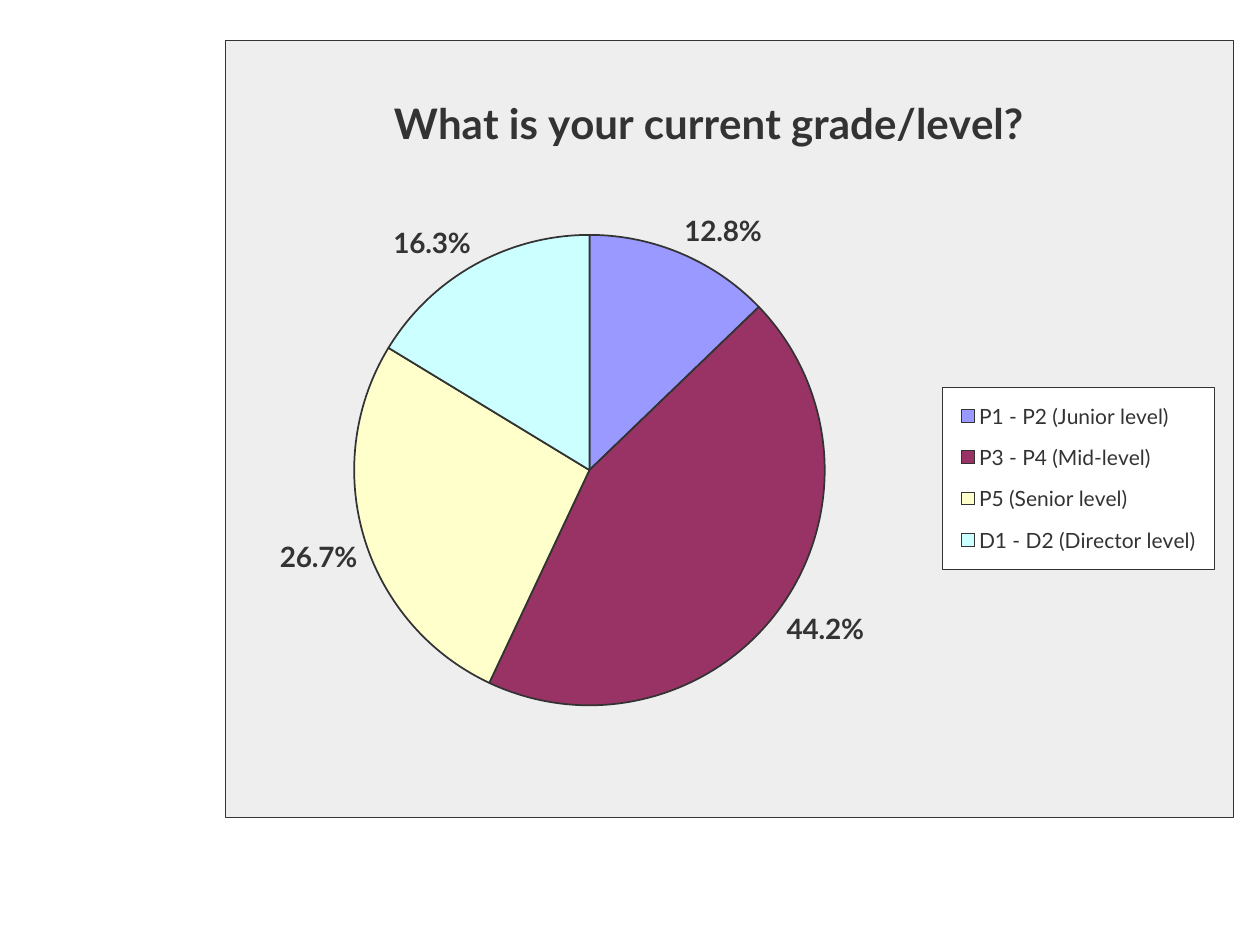
from dataclasses import dataclass
from typing import NamedTuple, Optional

from pptx import Presentation
from pptx import util as u
from pptx.chart.data import CategoryChartData
from pptx.dml.color import RGBColor
from pptx.enum import chart as ch
from pptx.oxml import parse_xml
from pptx.oxml.ns import nsdecls, qn

PX = u.Inches(1) // 126


@dataclass(frozen=True)
class Theme:
    face: str = "Lato"
    ink: str = "333333"
    panel: str = "EEEEEE"
    paper: str = "FFFFFF"
    head: int = 24
    label: int = 16
    key: int = 12
    base: int = 10
    thin: float = 0.25


class Box(NamedTuple):
    left: int
    top: int
    width: int
    height: int


class Slice(NamedTuple):
    name: str
    share: float
    fill: str


THEME = Theme()
FRAME = Box(225, 40, 1008, 778)
PLOT = Box(354, 190, 471, 560)
HEAD = Box(386, 84, 628, 50)
KEY = Box(943, 387, 272, 182)
SLICES = [
    Slice("P1 - P2 (Junior level)", 0.128, "9999FF"),
    Slice("P3 - P4 (Mid-level)", 0.442, "993366"),
    Slice("P5 (Senior level)", 0.267, "FFFFCC"),
    Slice("D1 - D2 (Director level)", 0.163, "CCFFFF"),
]


def style(font, size: int, bold: bool = False) -> None:
    form = {"name": THEME.face, "size": u.Pt(size), "bold": bold}
    for key, value in form.items():
        setattr(font, key, value)
    font.color.rgb = RGBColor.from_string(THEME.ink)


def panel(fill: str, edge: Optional[float]):
    """Shape properties for a chart part; no edge means no outline."""
    paint = '<a:solidFill><a:srgbClr val="{}"/></a:solidFill>'
    line = paint.format(THEME.ink) if edge else "<a:noFill/>"
    width = u.Pt(edge or 0)
    return parse_xml(
        f'<c:spPr {nsdecls("c", "a")}>{paint.format(fill)}'
        f'<a:ln w="{width}">{line}</a:ln></c:spPr>'
    )


def layout(box: Box, inner: bool = False, sized: bool = True):
    """Manual layout as fractions of the chart frame."""
    rows = [
        ("xMode", "edge"),
        ("yMode", "edge"),
        ("x", round((box.left - FRAME.left) / FRAME.width, 3)),
        ("y", round((box.top - FRAME.top) / FRAME.height, 3)),
    ]
    if inner:
        rows.insert(0, ("layoutTarget", "inner"))
    if sized:
        rows += [
            ("w", round(box.width / FRAME.width, 3)),
            ("h", round(box.height / FRAME.height, 3)),
        ]
    body = "".join(f'<c:{tag} val="{value}"/>' for tag, value in rows)
    return parse_xml(
        f'<c:layout {nsdecls("c")}><c:manualLayout>{body}'
        "</c:manualLayout></c:layout>"
    )


def place(part, node, after: Optional[str] = None) -> None:
    """Set the layout of a part, first or after the named child."""
    for old in part.findall(qn("c:layout")):
        part.remove(old)
    if after:
        part.find(qn(after)).addnext(node)
    else:
        part.insert(0, node)


def add_pie(slide):
    data = CategoryChartData(number_format="0.0%")
    data.categories = [s.name for s in SLICES]
    data.add_series("Series 1", [s.share for s in SLICES])
    spot = [u.Emu(n * PX) for n in FRAME]
    return slide.shapes.add_chart(ch.XL_CHART_TYPE.PIE, *spot, data).chart


def paint_slices(chart) -> None:
    plot = chart.plots[0]
    plot.vary_by_categories = True
    for i, item in enumerate(SLICES):
        form = plot.series[0].points[i].format
        form.fill.solid()
        form.fill.fore_color.rgb = RGBColor.from_string(item.fill)
        form.line.color.rgb = RGBColor.from_string(THEME.ink)
        form.line.width = u.Pt(1)
    plot.has_data_labels = True
    labels = plot.data_labels
    form = {
        "show_value": True,
        "show_percentage": False,
        "number_format": "0.0%",
        "number_format_is_linked": False,
        "position": ch.XL_LABEL_POSITION.OUTSIDE_END,
    }
    for key, value in form.items():
        setattr(labels, key, value)
    style(labels.font, THEME.label, True)


def set_title(chart) -> None:
    chart.has_title = True
    frame = chart.chart_title.text_frame
    frame.text = "What is your current grade/level?"
    style(frame.paragraphs[0].runs[0].font, THEME.head, True)
    root = chart.element.find(qn("c:chart")).find(qn("c:title"))
    place(root, layout(HEAD, sized=False), "c:tx")


def set_legend(chart) -> None:
    chart.has_legend = True
    chart.legend.position = ch.XL_LEGEND_POSITION.RIGHT
    chart.legend.include_in_layout = False
    style(chart.legend.font, THEME.key)
    root = chart.element.find(qn("c:chart")).find(qn("c:legend"))
    place(root, layout(KEY), "c:legendPos")
    root.find(qn("c:overlay")).addnext(panel(THEME.paper, THEME.thin))


def set_panels(chart) -> None:
    root = chart.element.find(qn("c:chart"))
    area = root.find(qn("c:plotArea"))
    place(area, layout(PLOT, inner=True))
    area.append(panel(THEME.panel, None))
    root.addnext(panel(THEME.panel, THEME.thin))
    root.addprevious(parse_xml(f'<c:roundedCorners {nsdecls("c")} val="0"/>'))


def main() -> None:
    deck = Presentation()
    deck.slide_width, deck.slide_height = u.Inches(10), u.Inches(7.5)
    slide = deck.slides.add_slide(deck.slide_layouts[6])

    # Pie with its slices and labels
    chart = add_pie(slide)
    style(chart.font, THEME.base)
    paint_slices(chart)

    # Title, legend and backgrounds
    set_title(chart)
    set_legend(chart)
    set_panels(chart)
    deck.save("out.pptx")


if __name__ == "__main__":
    main()
